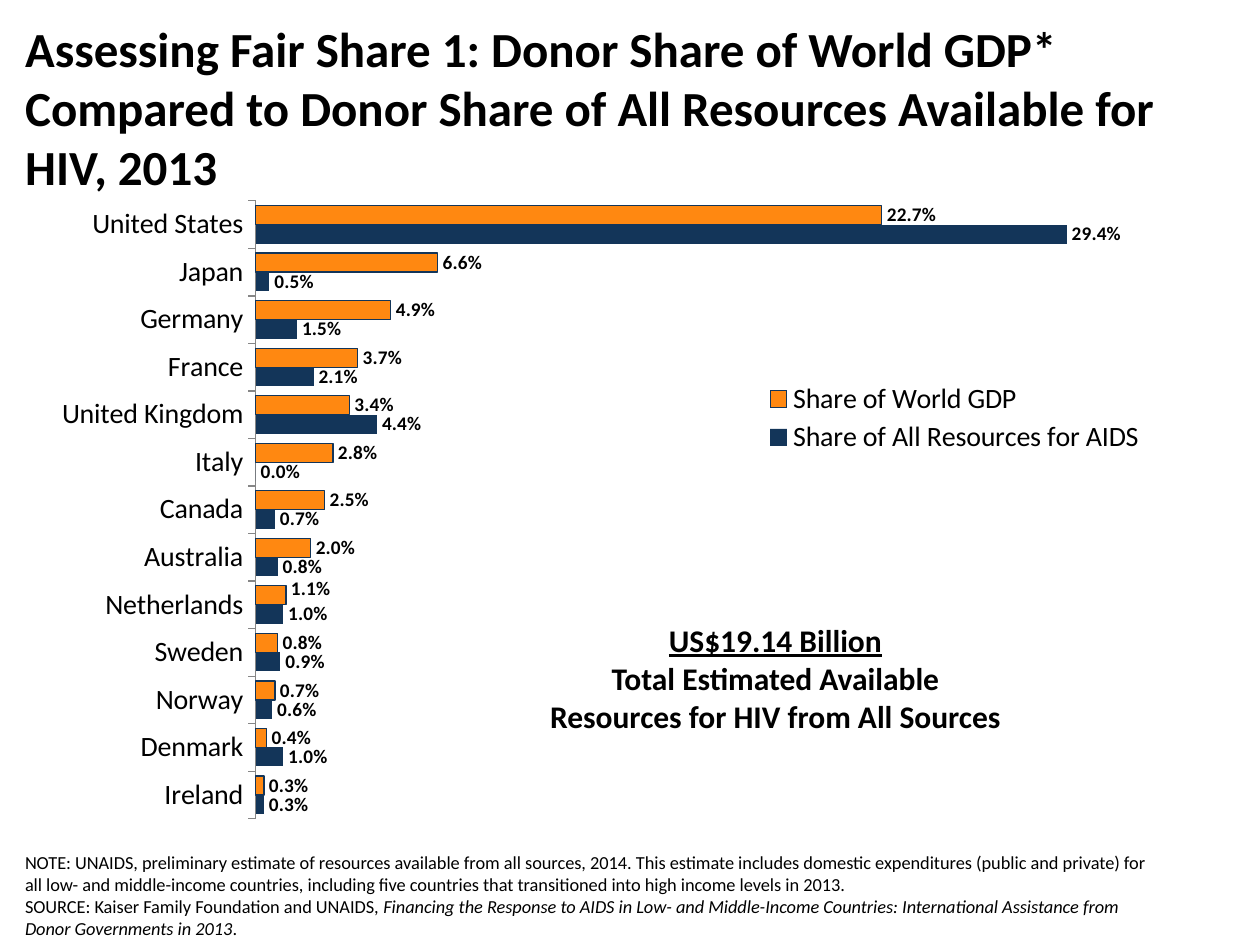
from dataclasses import dataclass
from pptx import Presentation
from pptx.chart.data import CategoryChartData
from pptx.dml.color import RGBColor as RGB
from pptx.enum.chart import (XL_CHART_TYPE as Kind, XL_LABEL_POSITION as Spot,
                             XL_LEGEND_POSITION as Side, XL_TICK_MARK as Tick)
from pptx.enum.text import (MSO_ANCHOR as Anchor, MSO_AUTO_SIZE as Fit,
                            PP_ALIGN as Align)
from pptx.oxml import parse_xml
from pptx.oxml.ns import nsdecls
from pptx.util import Inches, Pt


@dataclass(frozen=True)
class Theme:
    font: str = "Calibri"
    ink: RGB = RGB(0, 0, 0)
    navy: RGB = RGB(0x13, 0x35, 0x59)
    gold: RGB = RGB(0xFF, 0x88, 0x11)
    axis: RGB = RGB(0x86, 0x86, 0x86)
    title: float = 28
    total: float = 18
    label: float = 16
    value: float = 11
    note: float = 10.5


THEME = Theme()
PCT = "0.0%"

# Country, share of AIDS resources, share of world GDP (bottom to top)
ROWS = [
    ("Ireland", 0.003, 0.003), ("Denmark", 0.01, 0.004),
    ("Norway", 0.006, 0.007), ("Sweden", 0.009, 0.008),
    ("Netherlands", 0.01, 0.011), ("Australia", 0.008, 0.02),
    ("Canada", 0.007, 0.025), ("Italy", 0, 0.028),
    ("United Kingdom", 0.044, 0.034), ("France", 0.021, 0.037),
    ("Germany", 0.015, 0.049), ("Japan", 0.005, 0.066),
    ("United States", 0.294, 0.227),
]


def style(font, size, bold=False, italic=False, under=False):
    font.name, font.size = THEME.font, Pt(size)
    font.bold, font.italic, font.underline = bold, italic, under
    font.color.rgb = THEME.ink


def write(shape, paras, size, bold=False, align=Align.LEFT,
          anchor=Anchor.TOP, wrap=True):
    """Each paragraph is a list of (text, format) runs."""
    frame = shape.text_frame
    frame.word_wrap, frame.auto_size = wrap, Fit.NONE
    frame.vertical_anchor = anchor
    for i, runs in enumerate(paras):
        para = frame.paragraphs[0] if i == 0 else frame.add_paragraph()
        para.alignment = align
        for text, form in runs:
            run = para.add_run()
            run.text = text
            style(run.font, size, bold, **form)


def place(shape, box):
    shape.left, shape.top, shape.width, shape.height = map(Inches, box)


def layout(x, y, w=None, h=None, inner=False):
    """Manual chart layout in fractions of the chart."""
    parts = '<c:layoutTarget val="inner"/>' if inner else ""
    if w:
        parts += '<c:xMode val="edge"/><c:yMode val="edge"/>'
    for tag, val in zip("xywh", (x, y, w, h)):
        if val is not None:
            parts += f'<c:{tag} val="{val}"/>'
    return parse_xml(f'<c:layout {nsdecls("c")}><c:manualLayout>{parts}'
                     '</c:manualLayout></c:layout>')


def set_layout(node, after, new):
    for old in node.findall(new.tag):
        node.remove(old)
    if after is None:
        node.insert(0, new)
    else:
        after.addnext(new)


def add_title(slide, box):
    title = slide.shapes.title
    place(title, box)
    write(title, [[("Assessing Fair Share 1: Donor Share of World GDP* "
                    "Compared to Donor Share of All Resources Available "
                    "for HIV, 2013", {})]], THEME.title, bold=True)


def add_bars(slide, box):
    names, aids, gdp = zip(*ROWS)
    data = CategoryChartData(number_format=PCT)
    data.categories = names
    data.add_series("Share of All Resources for AIDS", aids)
    data.add_series("Share of World GDP", gdp)
    chart = slide.shapes.add_chart(
        Kind.BAR_CLUSTERED, *map(Inches, box), data).chart
    style(chart.font, THEME.total)
    chart.has_title = False

    # Axes
    cat, val = chart.category_axis, chart.value_axis
    cat.major_tick_mark = Tick.OUTSIDE
    cat.format.line.color.rgb = THEME.axis
    style(cat.tick_labels.font, THEME.label)
    val.minimum_scale, val.maximum_scale = 0, 0.35
    val.has_major_gridlines = val.visible = False

    # Bars and their values
    plot = chart.plots[0]
    plot.gap_width, plot.overlap, plot.vary_by_categories = 50, 0, False
    for ser, fill in zip(plot.series, (THEME.navy, THEME.gold)):
        ser.invert_if_negative = False
        ser.format.fill.solid()
        ser.format.fill.fore_color.rgb = fill
        tags = ser.data_labels
        tags.show_value, tags.position = True, Spot.OUTSIDE_END
        tags.number_format, tags.number_format_is_linked = PCT, False
        style(tags.font, THEME.value, bold=True)
    world = plot.series[1]
    world.format.line.color.rgb = THEME.navy
    world.format.line.width = Pt(0.75)

    # Lift one label clear of its neighbour
    spot = names.index("Netherlands")
    tag = world.points[spot].data_label
    tag.position = Spot.OUTSIDE_END
    style(tag.font, THEME.value, bold=True)
    for node in world.data_labels._element.dLbl_lst:
        set_layout(node, node.idx, layout(0, -0.01))

    # Legend and plot area
    chart.has_legend = True
    key = chart.legend
    key.position, key.include_in_layout = Side.RIGHT, False
    style(key.font, THEME.label)
    root = key._element
    set_layout(root, root.legendPos, layout(0.59, 0.3, 0.36, 0.12))
    area = chart._chartSpace.chart.plotArea
    set_layout(area, None, layout(0.204, 0.033, 0.782, 0.929, inner=True))


def add_total(slide, box):
    text = slide.shapes.add_textbox(*map(Inches, box))
    write(text, [[("US$19.14 Billion", {"under": True})],
                 [("Total Estimated Available", {})],
                 [("Resources for HIV from All Sources", {})]],
          THEME.total, bold=True, align=Align.CENTER, wrap=False)


def add_notes(slide, box):
    text = slide.shapes.add_textbox(*map(Inches, box))
    write(text, [
        [("NOTE: UNAIDS, preliminary estimate of resources available from "
          "all sources, 2014. This estimate includes domestic expenditures "
          "(public and private) for all low- and middle-income countries, "
          "including five countries that transitioned into high income "
          "levels in 2013.", {})],
        [("SOURCE: Kaiser Family Foundation and UNAIDS, ", {}),
         ("Financing the Response to AIDS in Low- and Middle-Income "
          "Countries: International Assistance from Donor Governments "
          "in 2013", {"italic": True}), (".", {})],
    ], THEME.note, anchor=Anchor.BOTTOM)


def main():
    deck = Presentation()
    deck.slide_width, deck.slide_height = Inches(10), Inches(7.5)
    slide = deck.slides.add_slide(deck.slide_layouts[5])
    add_bars(slide, (0.03, 1.42, 9.8, 5.28))
    add_notes(slide, (0.1, 6.9, 9.15, 0.6))
    add_title(slide, (0.1, 0.1, 9.8, 1))
    add_total(slide, (4.25, 4.88, 3.81, 1.01))
    deck.save("out.pptx")


if __name__ == "__main__":
    main()
